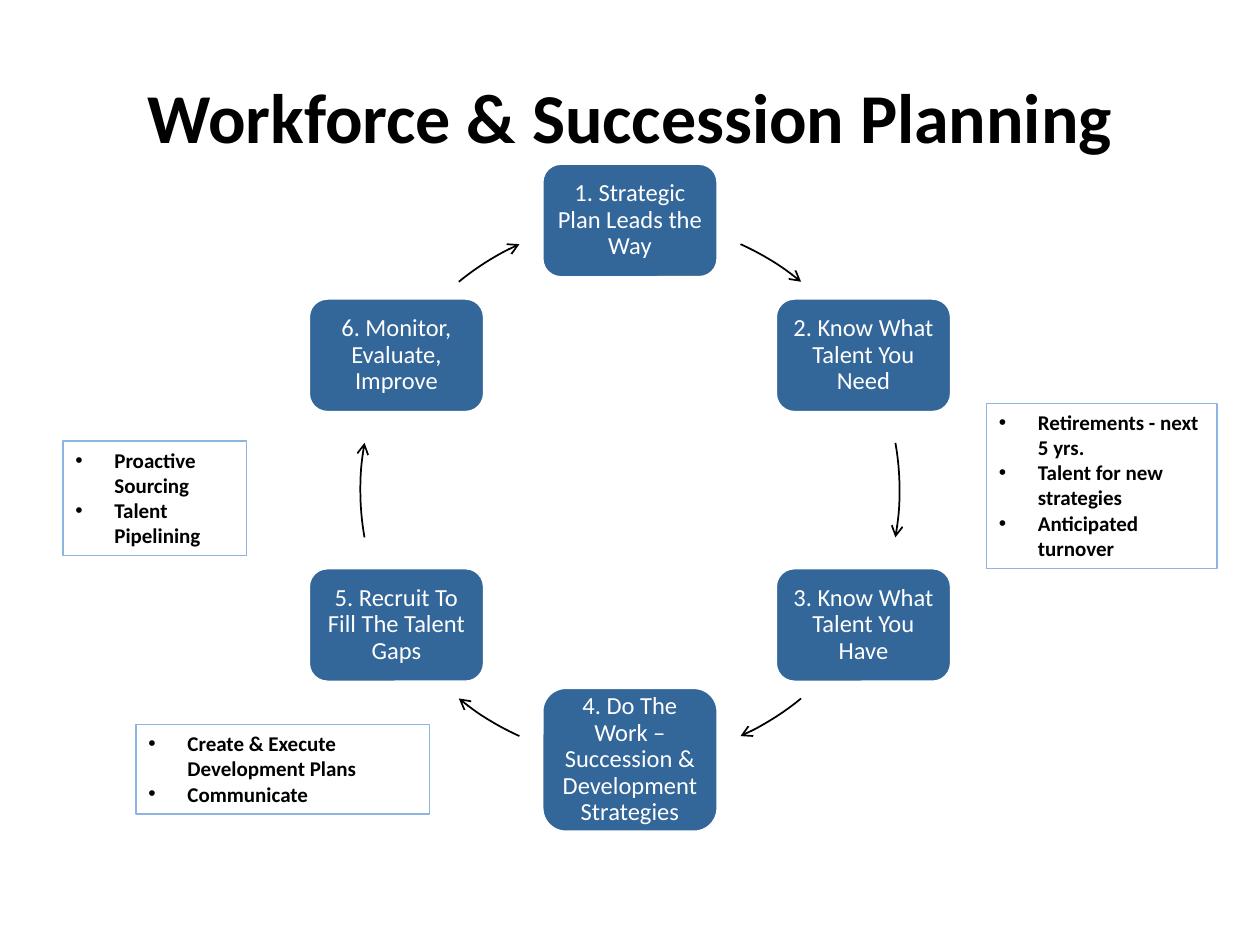
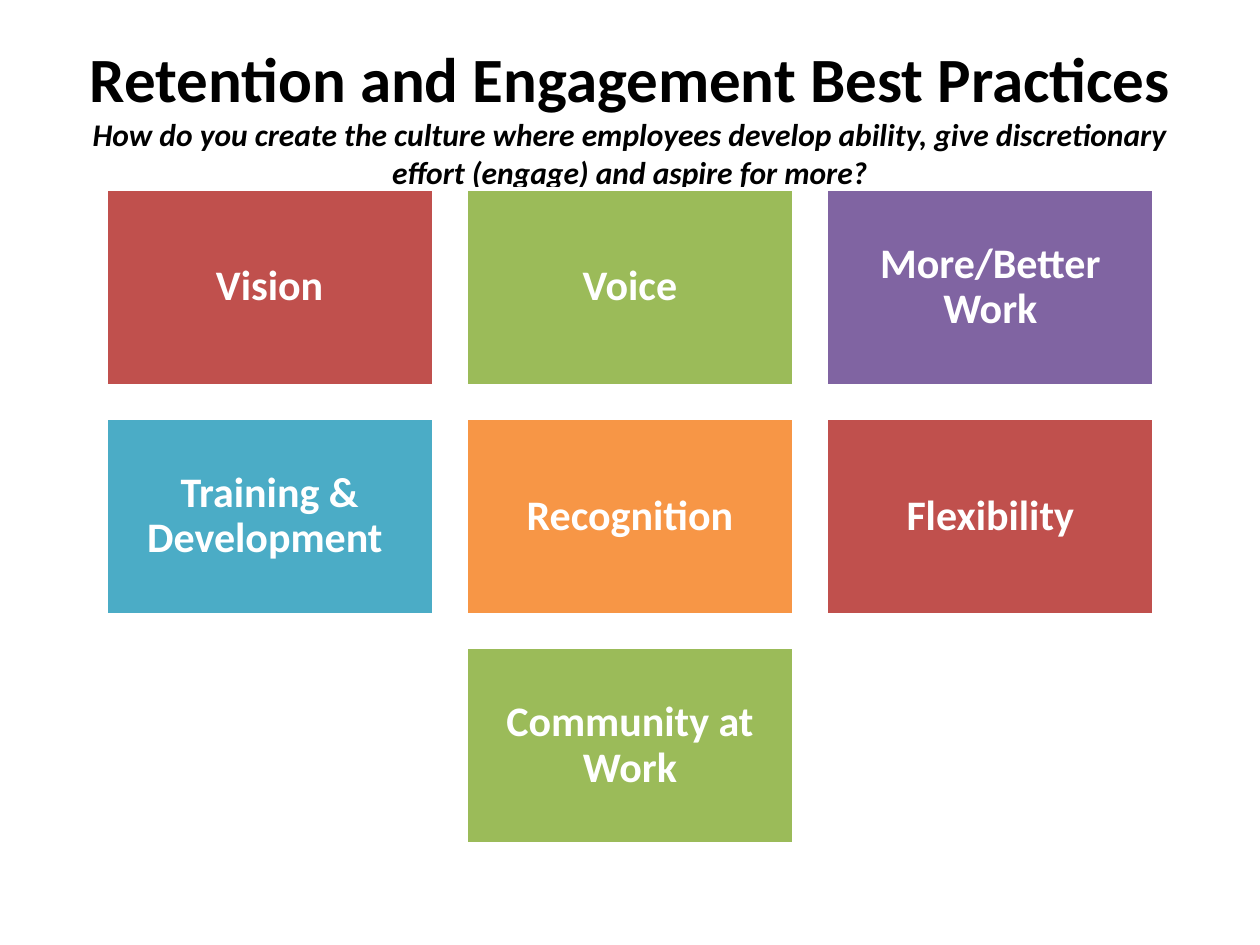
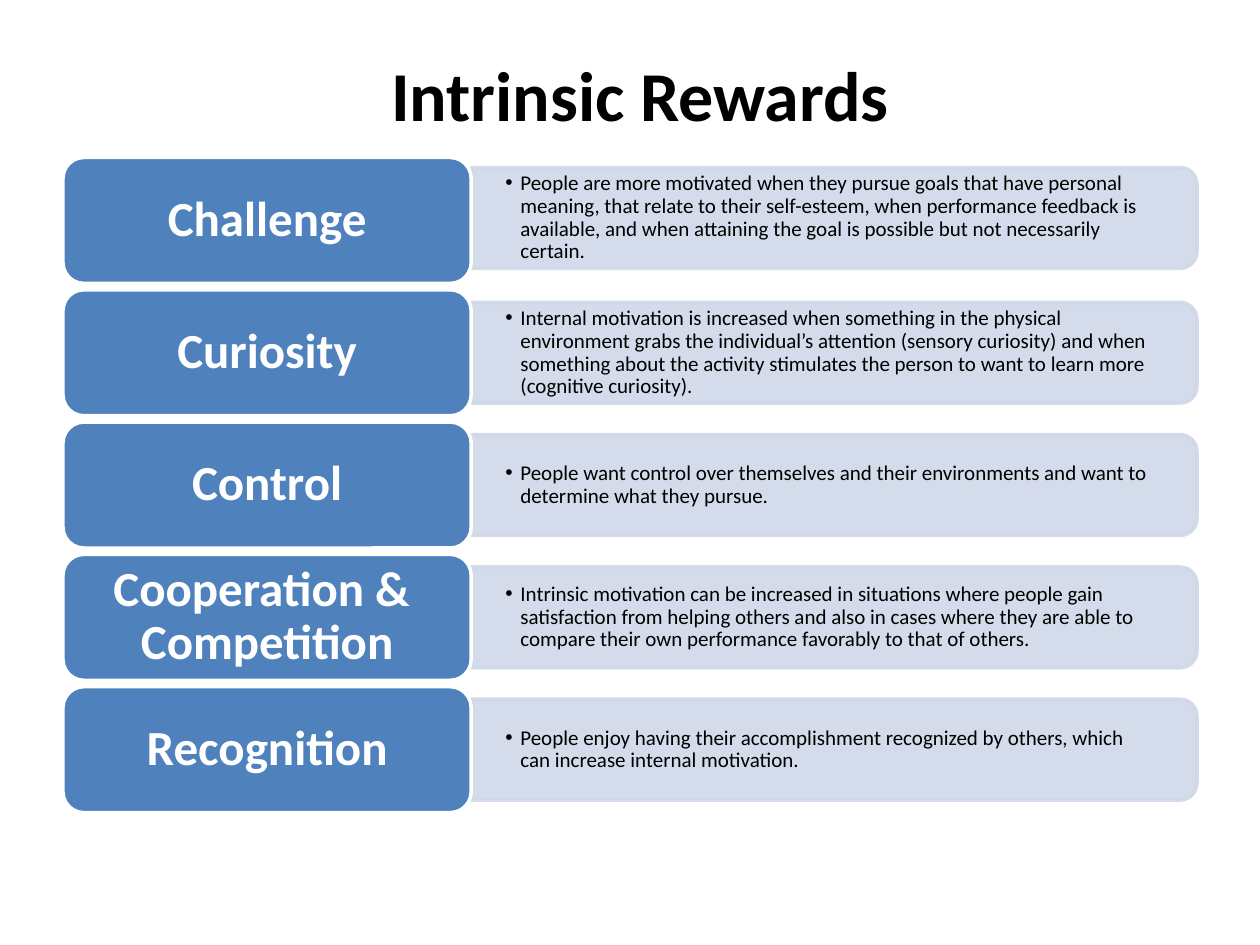
from copy import deepcopy
from math import cos, radians, sin

from lxml import etree
from pptx import Presentation
from pptx.dml.color import RGBColor
from pptx.enum.shapes import MSO_SHAPE
from pptx.enum.text import MSO_ANCHOR, MSO_AUTO_SIZE, PP_ALIGN
from pptx.oxml.ns import qn
from pptx.util import Pt

PX = 9144  # 100 px to the inch
FONT = "Calibri"
BLACK, WHITE = "000000", "FFFFFF"
NODE_BLUE, NOTE_LINE = "336699", "8EB4E3"
CARD_BLUE, PANEL_BLUE = "4F81BD", "D0D8E8"
RED, GREEN, PURPLE, AQUA, ORANGE = "C0504D", "9BBB59", "8064A2", "4BACC6", "F79646"


def style(shape, fill=None, line=None, width=2, inset=(10, 5), anchor=MSO_ANCHOR.MIDDLE):
    """Set fill, outline and text frame; inset is horizontal, vertical in px."""
    shape.shadow.inherit = False
    if fill:
        shape.fill.solid()
        shape.fill.fore_color.rgb = RGBColor.from_string(fill)
    else:
        shape.fill.background()
    if line:
        shape.line.color.rgb = RGBColor.from_string(line)
        shape.line.width = Pt(width)
    frame = shape.text_frame
    frame.word_wrap = True
    frame.vertical_anchor = anchor
    frame.margin_left = frame.margin_right = inset[0] * PX
    frame.margin_top = frame.margin_bottom = inset[1] * PX
    return frame


def write(frame, text, size, color=BLACK, bold=False, italic=False,
          align=PP_ALIGN.CENTER, spacing=None, indent=0, new_para=False):
    """Add text to the last paragraph or a new one; an indent in px brings a bullet."""
    para = frame.add_paragraph() if new_para else frame.paragraphs[-1]
    para.alignment = align
    if spacing:
        para.line_spacing = spacing
    if indent:
        properties = para._p.get_or_add_pPr()
        properties.set("marL", str(indent * PX))
        properties.set("indent", str(-indent * PX))
        etree.SubElement(properties, qn("a:buFont")).set("typeface", "Arial")
        etree.SubElement(properties, qn("a:buChar")).set("char", "•")
    for number, line in enumerate(text.split("\n")):
        if number:
            para.add_line_break()
            para._p[-1].append(deepcopy(span._r.rPr))
        if line:
            span = para.add_run()
            span.text = line
            span.font.name = FONT
            span.font.size = Pt(size)
            span.font.bold = bold
            span.font.italic = italic
            span.font.color.rgb = RGBColor.from_string(color)


deck = Presentation()
deck.slide_width, deck.slide_height = 1000 * PX, 750 * PX

pages = []
for heading, size, left, top in [
    ("Workforce & Succession Planning", 40, 50, 50),
    ("Retention and Engagement Best Practices\n", 36, 50, 50),
    ("Intrinsic Rewards", 40, 58, 33),
]:
    page = deck.slides.add_slide(deck.slide_layouts[5])
    title = page.shapes.title
    title.left, title.top, title.width, title.height = left * PX, top * PX, 900 * PX, 83 * PX
    title.text_frame.auto_size = MSO_AUTO_SIZE.NONE
    title.text_frame.vertical_anchor = MSO_ANCHOR.MIDDLE
    write(title.text_frame, heading, size, bold=True)
    pages.append(page)
cycle_page, practices_page, rewards_page = pages

# Planning cycle: six steps on a ring, with an arc between neighbours
CENTER_X, CENTER_Y, RADIUS = 500, 389, 214
NODE_WIDTH = 140
steps = [
    ("1. Strategic Plan Leads the Way", 91),
    ("2. Know What Talent You Need", 91),
    ("3. Know What Talent You Have", 91),
    ("4. Do The Work – Succession & Development Strategies", 115),
    ("5. Recruit To Fill The Talent Gaps", 91),
    ("6. Monitor, Evaluate, Improve", 91),
]
for number, (step, height) in enumerate(steps):
    angle = radians(60 * number)
    x = CENTER_X + RADIUS * sin(angle) - NODE_WIDTH / 2
    y = CENTER_Y - RADIUS * cos(angle) - height / 2
    node = cycle_page.shapes.add_shape(
        MSO_SHAPE.ROUNDED_RECTANGLE, round(x * PX), round(y * PX), NODE_WIDTH * PX, height * PX)
    frame = style(node, NODE_BLUE, WHITE, inset=(6, 6))
    write(frame, step, 14, WHITE, spacing=0.9)

# Degrees clockwise from the top of the ring
arc_spans = [(24.2, 39.4), (79.9, 100.1), (140.6, 155.8),
             (204.2, 219.4), (259.9, 280.1), (320.6, 335.8)]
for span_angles in arc_spans:
    arc = cycle_page.shapes.add_shape(
        MSO_SHAPE.ARC, (CENTER_X - RADIUS) * PX, (CENTER_Y - RADIUS) * PX,
        2 * RADIUS * PX, 2 * RADIUS * PX)
    for end, angle in enumerate(span_angles):
        arc.adjustments[end] = (angle - 90) % 360 * 0.6  # 60000 units a degree, over 100000
    style(arc, line=BLACK, width=1)
    etree.SubElement(arc.line._get_or_add_ln(), qn("a:tailEnd")).set("type", "arrow")

notes = [
    ((50, 350, 146, 91), ["Proactive Sourcing", "Talent Pipelining"]),
    ((783, 320, 183, 131),
     ["Retirements - next 5 yrs.", "Talent for new strategies", "Anticipated turnover"]),
    ((108, 575, 233, 71), ["Create & Execute Development Plans", "Communicate"]),
]
for box, items in notes:
    note = cycle_page.shapes.add_shape(MSO_SHAPE.RECTANGLE, *[length * PX for length in box])
    frame = style(note, line=NOTE_LINE, width=0.75, anchor=MSO_ANCHOR.TOP)
    for number, item in enumerate(items):
        write(frame, item, 12, bold=True, align=PP_ALIGN.LEFT, indent=31, new_para=number > 0)

# Best practices: tiles in three columns, the last one centred
write(practices_page.shapes.title.text_frame,
      "How do you create the culture where employees develop ability, "
      "give discretionary effort (engage) and aspire for more?", 18, bold=True, italic=True)
TILE_WIDTH, TILE_HEIGHT, TILE_GAP = 260, 156, 26
tiles = [
    ("Vision", RED, 0, 0), ("Voice", GREEN, 1, 0), ("More/Better Work", PURPLE, 2, 0),
    ("Training & Development ", AQUA, 0, 1), ("Recognition", ORANGE, 1, 1),
    ("Flexibility", RED, 2, 1), ("Community at Work", GREEN, 1, 2),
]
for practice, color, column, row in tiles:
    tile = practices_page.shapes.add_shape(
        MSO_SHAPE.RECTANGLE,
        (84 + column * (TILE_WIDTH + TILE_GAP)) * PX,
        (150 + row * (TILE_HEIGHT + TILE_GAP)) * PX,
        TILE_WIDTH * PX, TILE_HEIGHT * PX)
    frame = style(tile, color, WHITE, inset=(10, 10))
    write(frame, practice, 24, WHITE, bold=True, spacing=0.9)

# Rewards: a card with a description panel on each row
CARD_LEFT, CARD_WIDTH, CARD_HEIGHT, ROW_STEP = 50, 324, 100, 105
PANEL_LEFT, PANEL_WIDTH, PANEL_HEIGHT = CARD_LEFT + CARD_WIDTH, 576, 80
rewards = [
    ("Challenge", 8,
     "People are more motivated when they pursue goals that have personal meaning, that relate "
     "to their self-esteem, when performance feedback is available, and when attaining the goal "
     "is possible but not necessarily certain."),
    ("Curiosity", 10,
     "Internal motivation is increased when something in the physical environment grabs the "
     "individual’s attention (sensory curiosity) and when something about the activity "
     "stimulates the person to want to learn more (cognitive curiosity)."),
    ("Control", 10,
     "People want control over themselves and their environments and want to determine what "
     "they pursue."),
    ("Cooperation & \nCompetition", 10,
     "Intrinsic motivation can be increased in situations where people gain satisfaction from "
     "helping others and also in cases where they are able to compare their own performance "
     "favorably to that of others."),
    ("Recognition", 10,
     "People enjoy having their accomplishment recognized by others, which can increase "
     "internal motivation."),
]
for row, (reward, panel_drop, description) in enumerate(rewards):
    card_top = 125 + row * ROW_STEP
    panel_top = card_top + panel_drop
    turn_shift = (PANEL_WIDTH - PANEL_HEIGHT) // 2
    panel = rewards_page.shapes.add_shape(
        MSO_SHAPE.ROUND_2_SAME_RECTANGLE,
        (PANEL_LEFT + turn_shift) * PX, (panel_top - turn_shift) * PX,
        PANEL_HEIGHT * PX, PANEL_WIDTH * PX)
    panel.rotation = 90
    style(panel, PANEL_BLUE, PANEL_BLUE)
    for color in panel._element.spPr.iter(qn("a:srgbClr")):
        etree.SubElement(color, qn("a:alpha")).set("val", "90000")

    text_box = rewards_page.shapes.add_textbox(
        PANEL_LEFT * PX, (panel_top + 4) * PX, 572 * PX, 72 * PX)
    frame = style(text_box, inset=(27, 14))
    write(frame, description, 12, align=PP_ALIGN.LEFT, spacing=0.9, indent=12)

    card = rewards_page.shapes.add_shape(
        MSO_SHAPE.ROUNDED_RECTANGLE,
        CARD_LEFT * PX, card_top * PX, CARD_WIDTH * PX, CARD_HEIGHT * PX)
    frame = style(card, CARD_BLUE, WHITE, inset=(12, 6))
    write(frame, reward, 28, WHITE, bold=True, spacing=0.9)

deck.save("out.pptx")
